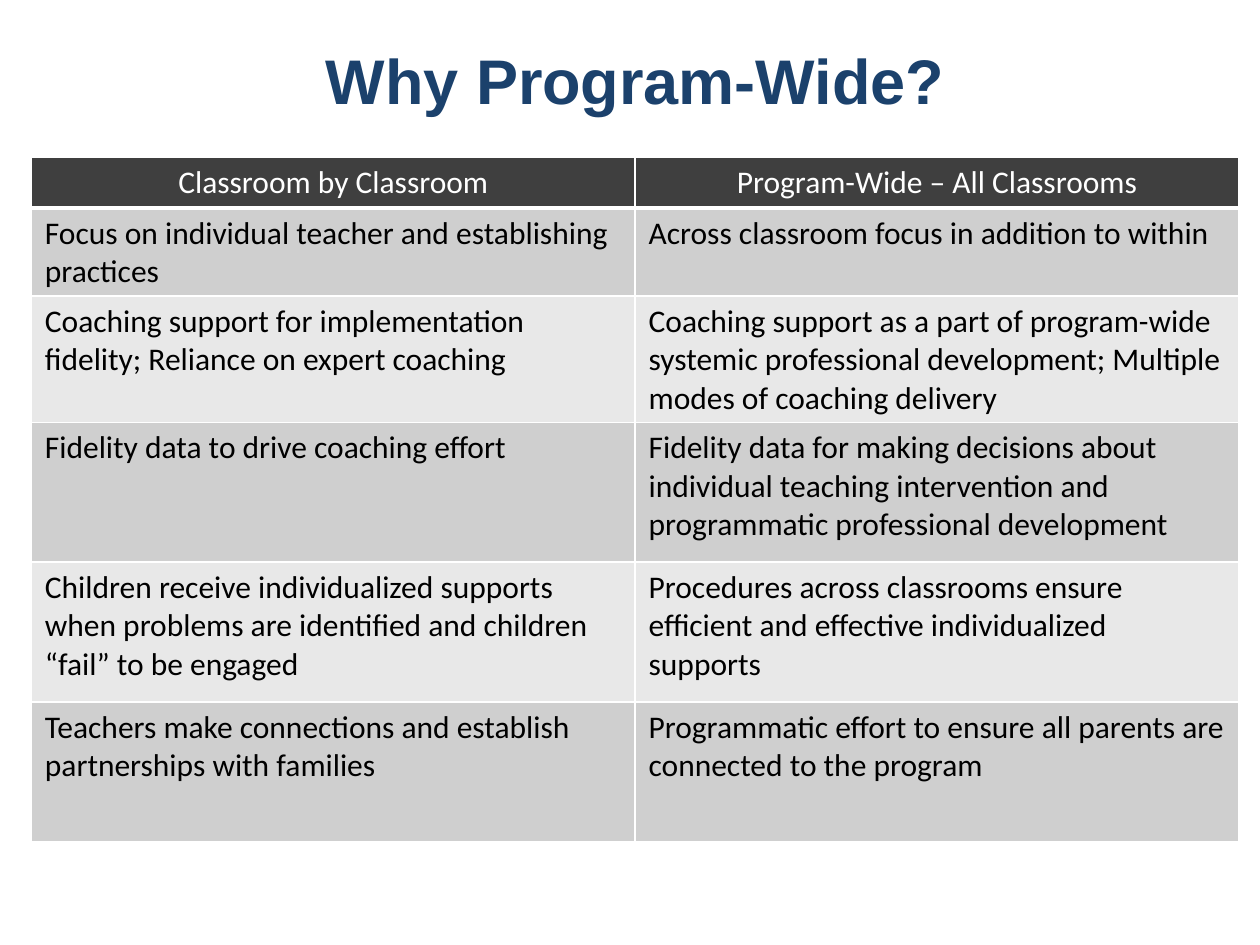
from dataclasses import dataclass

from lxml.etree import SubElement
from pptx import Presentation
from pptx.dml.color import RGBColor as RGB
from pptx.enum.text import MSO_ANCHOR as Anchor, PP_ALIGN as Align
from pptx.oxml.ns import qn
from pptx.util import Pt


@dataclass(frozen=True)
class Theme:
    title: str = "1B416C"
    header: str = "3F3F3F"
    bands: tuple = ("CFCFCF", "E8E8E8")
    white: str = "FFFFFF"
    ink: str = "000000"
    title_font: str = "Arial"
    body_font: str = "Calibri"
    title_size: int = 36
    body_size: int = 18


@dataclass(frozen=True)
class Row:
    classroom: str
    program: str
    height: float


T = Theme()
LEFT, WIDTH = 18, 690

ROWS = [
    Row("Classroom by Classroom", "Program-Wide – All Classrooms", 28),
    Row("Focus on individual teacher and establishing practices",
        "Across classroom focus in addition to within", 50),
    Row("Coaching support for implementation fidelity; Reliance on expert coaching",
        "Coaching support as a part of program-wide systemic professional "
        "development; Multiple modes of coaching delivery", 70.5),
    Row("Fidelity data to drive coaching effort",
        "Fidelity data for making decisions about individual teaching "
        "intervention and programmatic professional development", 80),
    Row("Children receive individualized supports when problems are identified "
        "and children “fail” to be engaged",
        "Procedures across classrooms ensure efficient and effective "
        "individualized supports", 80),
    Row("Teachers make connections and establish partnerships with families",
        "Programmatic effort to ensure all parents are connected to the program", 80),
]


def write(tf, text: str, *, size: float = T.body_size, font: str = T.body_font,
          color: str = T.ink, bold: bool = False, align=Align.LEFT,
          spacing: float = 1.0) -> None:
    tf.word_wrap = True
    p = tf.paragraphs[0]
    p.alignment, p.line_spacing = align, spacing
    r = p.add_run()
    r.text = text
    r.font.size, r.font.name, r.font.bold = Pt(size), font, bold
    r.font.color.rgb = RGB.from_string(color)


def set_borders(cell, bottom: float) -> None:
    """Draw white cell borders; they must come before the fill in tcPr."""
    props = cell._tc.get_or_add_tcPr()
    for side, width in (("L", 1), ("R", 1), ("T", 1), ("B", bottom)):
        line = SubElement(props, qn(f"a:ln{side}"), w=str(Pt(width)))
        fill = SubElement(line, qn("a:solidFill"))
        SubElement(fill, qn("a:srgbClr"), val=T.white)


def add_title(s, text: str) -> None:
    sp = s.shapes.add_textbox(Pt(LEFT), Pt(18), Pt(WIDTH), Pt(60))
    sp.text_frame.vertical_anchor = Anchor.MIDDLE
    write(sp.text_frame, text, size=T.title_size, font=T.title_font,
          color=T.title, bold=True, align=Align.CENTER, spacing=0.9)


def add_comparison(s, rows: list[Row]) -> None:
    height = sum(row.height for row in rows)
    table = s.shapes.add_table(len(rows), 2, Pt(LEFT), Pt(90),
                               Pt(WIDTH), Pt(height)).table
    for i, row in enumerate(rows):
        table.rows[i].height = Pt(row.height)
        header = i == 0
        fill = T.header if header else T.bands[(i - 1) % 2]
        for cell, text in zip(table.rows[i].cells, (row.classroom, row.program)):
            cell.margin_left = cell.margin_right = Pt(7.7)
            cell.margin_top = cell.margin_bottom = Pt(3.6)
            set_borders(cell, bottom=3 if header else 1)
            cell.fill.solid()
            cell.fill.fore_color.rgb = RGB.from_string(fill)
            write(cell.text_frame, text, color=T.white if header else T.ink,
                  align=Align.CENTER if header else Align.LEFT)


def main() -> None:
    prs = Presentation()
    prs.slide_width, prs.slide_height = Pt(720), Pt(540)
    s = prs.slides.add_slide(prs.slide_layouts[6])
    # Heading
    add_title(s, "Why Program-Wide?")
    # Comparison table
    add_comparison(s, ROWS)
    prs.save("out.pptx")


if __name__ == "__main__":
    main()
